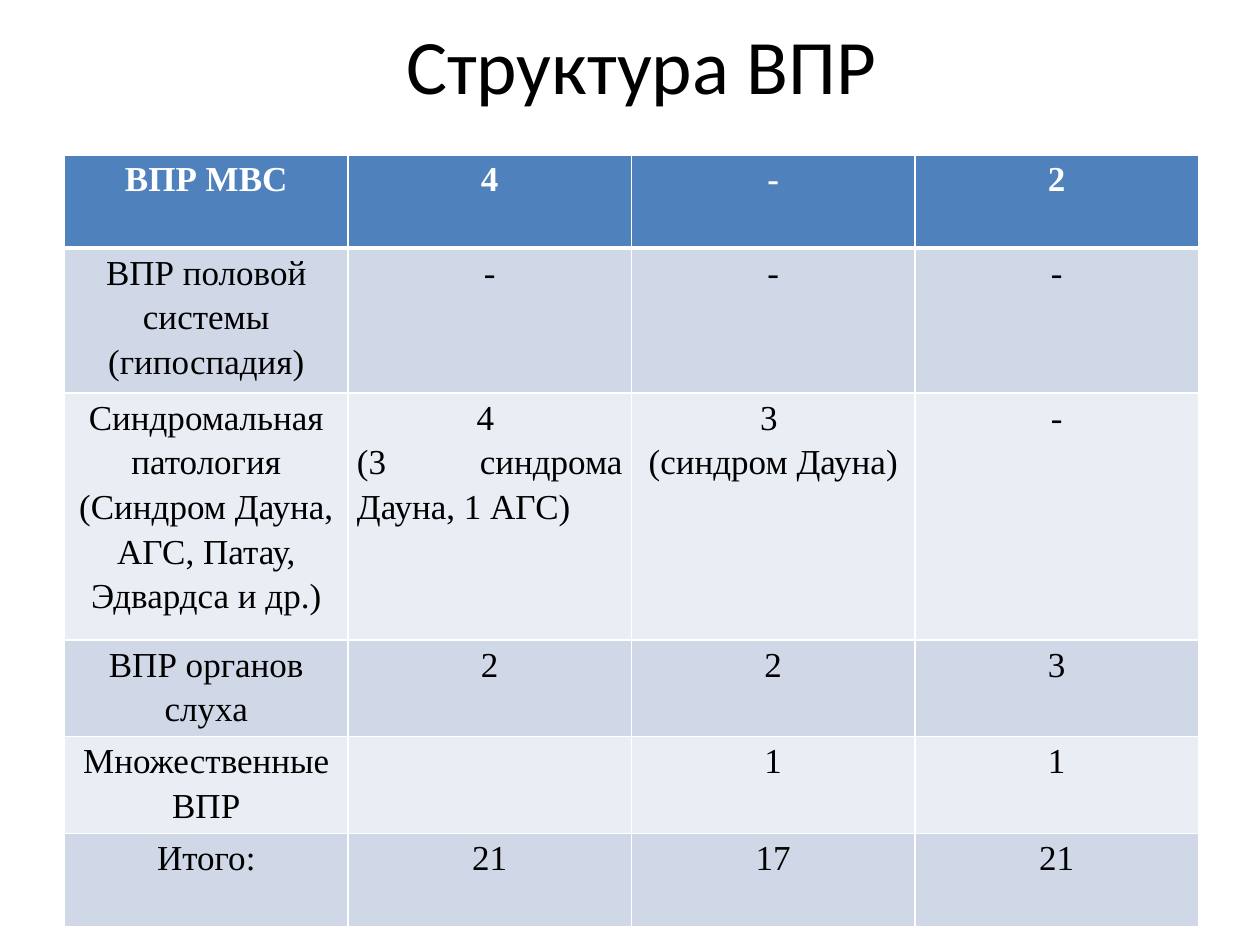
from lxml.etree import SubElement
from pptx import Presentation
from pptx.dml.color import RGBColor
from pptx.enum.text import MSO_ANCHOR, PP_ALIGN
from pptx.oxml.ns import qn
from pptx.util import Cm, Pt

COLORS = {
    "text": "000000",
    "white": "FFFFFF",
    "header": "4F81BD",
    "odd_band": "D0D8E8",
    "even_band": "E9EDF4",
}
ROWS = [
    ["ВПР МВС", "4", "-", "2"],
    ["ВПР половой системы (гипоспадия)", "-", "-", "-"],
    [
        "Синдромальная патология (Синдром Дауна, АГС, Патау, Эдвардса и др.)",
        "4 \n(3 синдрома Дауна, 1 АГС)",
        "3 \n(синдром Дауна)",
        "-",
    ],
    ["ВПР органов слуха", "2", "2", "3"],
    ["Множественные ВПР", "", "1", "1"],
    ["Итого:", "21", "17", "21"],
]
ROW_HEIGHTS = [1.88, 2.49, 4.98, 1.88, 1.88, 1.88]
COLUMN_WIDTH = 5.715


def write_text(frame, text, font="Times New Roman", size=20, color="text", bold=False, spacing=1.15):
    frame.word_wrap = True
    frame.text = text
    for para in frame.paragraphs:
        para.alignment = PP_ALIGN.CENTER
        para.line_spacing = spacing
        for span in para.runs:
            span.font.name = font
            span.font.size = Pt(size)
            span.font.bold = bold
            span.font.color.rgb = RGBColor.from_string(COLORS[color])


def add_border(cell, side, width):
    line = SubElement(cell._tc.get_or_add_tcPr(), qn(f"a:ln{side}"), w=str(Pt(width)))
    fill = SubElement(line, qn("a:solidFill"))
    SubElement(fill, qn("a:srgbClr"), val=COLORS["white"])


deck = Presentation()
deck.slide_width = Cm(25.4)
deck.slide_height = Cm(19.05)
page = deck.slides.add_slide(deck.slide_layouts[6])

title = page.shapes.add_textbox(Cm(1.5), Cm(0), Cm(22.86), Cm(2.57))
title.text_frame.vertical_anchor = MSO_ANCHOR.MIDDLE
write_text(title.text_frame, "Структура ВПР", font="Calibri", size=44, spacing=1.0)

table = page.shapes.add_table(
    len(ROWS), len(ROWS[0]), Cm(1.3), Cm(3.12), Cm(COLUMN_WIDTH * len(ROWS[0])), Cm(sum(ROW_HEIGHTS))
).table
for column in table.columns:
    column.width = Cm(COLUMN_WIDTH)

for row_index, (texts, height) in enumerate(zip(ROWS, ROW_HEIGHTS)):
    table.rows[row_index].height = Cm(height)
    is_header = row_index == 0
    band = "header" if is_header else "odd_band" if row_index % 2 else "even_band"
    for column_index, text in enumerate(texts):
        cell = table.cell(row_index, column_index)
        cell.margin_left = cell.margin_right = Cm(0.18)
        cell.margin_top = cell.margin_bottom = Cm(0)
        write_text(cell.text_frame, text, color="white" if is_header else "text", bold=is_header)
        for side in "LRTB":
            touches_header_edge = (is_header and side == "B") or (row_index == 1 and side == "T")
            add_border(cell, side, 3 if touches_header_edge else 1)
        cell.fill.solid()
        cell.fill.fore_color.rgb = RGBColor.from_string(COLORS[band])

table.cell(2, 1).text_frame.paragraphs[1].alignment = PP_ALIGN.JUSTIFY

deck.save("out.pptx")
